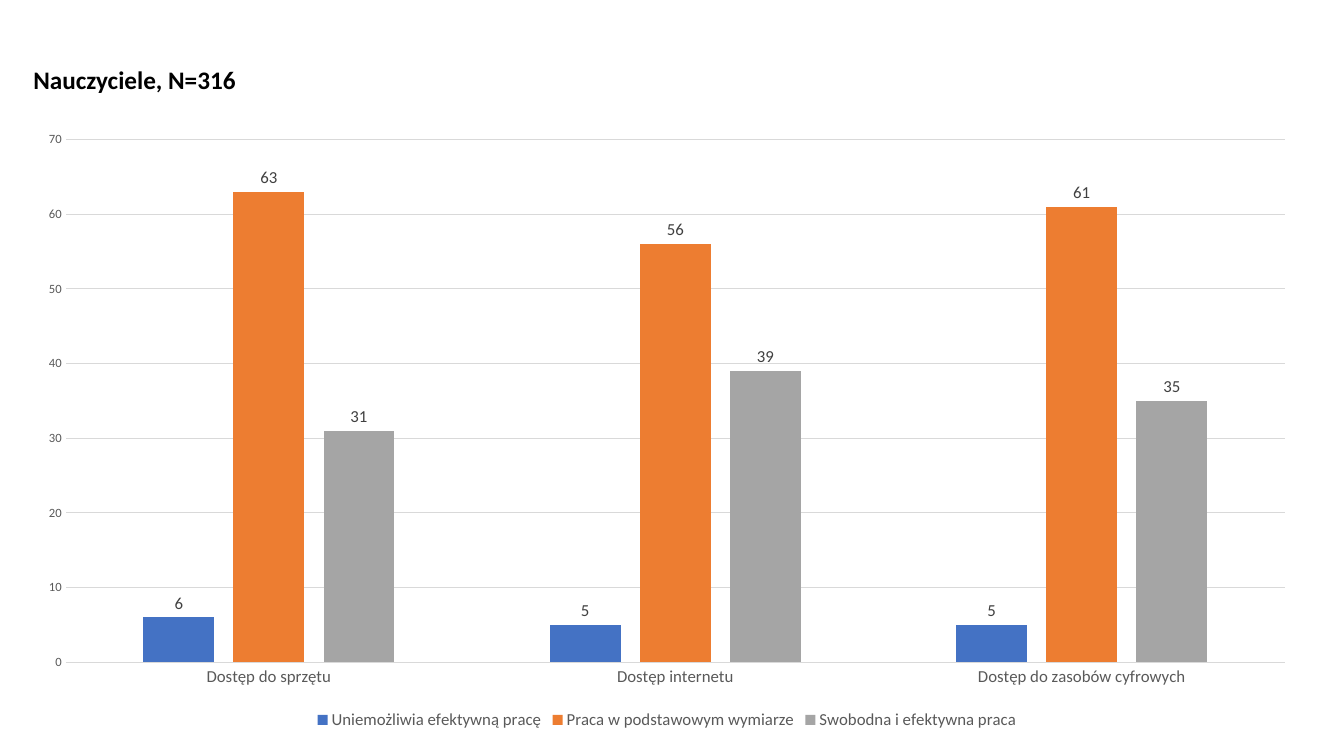
from pptx import Presentation
from pptx.chart.data import CategoryChartData
from pptx.dml.color import RGBColor
from pptx.enum.chart import XL_CHART_TYPE, XL_LABEL_POSITION, XL_LEGEND_POSITION, XL_TICK_MARK
from pptx.enum.text import MSO_ANCHOR, PP_ALIGN
from pptx.util import Inches, Pt

COLUMNS = XL_CHART_TYPE.COLUMN_CLUSTERED
OUTSIDE = XL_LABEL_POSITION.OUTSIDE_END
BOTTOM = XL_LEGEND_POSITION.BOTTOM
NO_TICK = XL_TICK_MARK.NONE

FONT = "Calibri"
BLACK = RGBColor(0x00, 0x00, 0x00)
DARK_GREY = RGBColor(0x40, 0x40, 0x40)
TEXT_GREY = RGBColor(0x59, 0x59, 0x59)
LINE_GREY = RGBColor(0xD9, 0xD9, 0xD9)
BLUE = RGBColor(0x44, 0x72, 0xC4)
ORANGE = RGBColor(0xED, 0x7D, 0x31)
GREY = RGBColor(0xA5, 0xA5, 0xA5)

CATEGORIES = ["Dostęp do sprzętu", "Dostęp internetu", "Dostęp do zasobów cyfrowych"]
ANSWERS = [
    ("Uniemożliwia efektywną pracę", (6, 5, 5), BLUE),
    ("Praca w podstawowym wymiarze", (63, 56, 61), ORANGE),
    ("Swobodna i efektywna praca", (31, 39, 35), GREY),
]
LEFT = Inches(0.23)


def style_font(font, size, color):
    font.name = FONT
    font.size = Pt(size)
    font.color.rgb = color


def style_line(line):
    line.color.rgb = LINE_GREY
    line.width = Pt(0.75)


deck = Presentation()
deck.slide_width, deck.slide_height = Inches(13.33), Inches(7.5)
page = deck.slides.add_slide(deck.slide_layouts.get_by_name("Title Only"))

# Title
title = page.shapes.title
title.left, title.top = LEFT, Inches(0.59)
title.width, title.height = Inches(7.35), Inches(0.4)
title.text_frame.text = "Nauczyciele, N=316"
title.text_frame.vertical_anchor = MSO_ANCHOR.MIDDLE
para = title.text_frame.paragraphs[0]
para.alignment = PP_ALIGN.LEFT
style_font(para.font, 18, BLACK)
para.font.bold = True

# Chart
data = CategoryChartData()
data.categories = CATEGORIES
for name, values, color in ANSWERS:
    data.add_series(name, values)
chart = page.shapes.add_chart(
    COLUMNS, LEFT, Inches(1.19), Inches(12.77), Inches(6.09), data
).chart
style_font(chart.font, 10, BLACK)
chart.has_title = False

# Columns and their labels
plot = chart.plots[0]
plot.gap_width = 219
plot.overlap = -27
plot.vary_by_categories = False
for series, (name, values, color) in zip(plot.series, ANSWERS):
    series.format.fill.solid()
    series.format.fill.fore_color.rgb = color
    labels = series.data_labels
    labels.show_value = True
    labels.position = OUTSIDE
    style_font(labels.font, 12, DARK_GREY)

# Axes
for axis, size in ((chart.category_axis, 12), (chart.value_axis, 9)):
    axis.major_tick_mark = axis.minor_tick_mark = NO_TICK
    style_font(axis.tick_labels.font, size, TEXT_GREY)
style_line(chart.category_axis.format.line)
value_axis = chart.value_axis
value_axis.minimum_scale, value_axis.maximum_scale = 0, 70
value_axis.major_unit = 10
value_axis.format.line.fill.background()
style_line(value_axis.major_gridlines.format.line)

# Legend
chart.has_legend = True
chart.legend.position = BOTTOM
chart.legend.include_in_layout = False
style_font(chart.legend.font, 12, TEXT_GREY)

deck.save("out.pptx")
